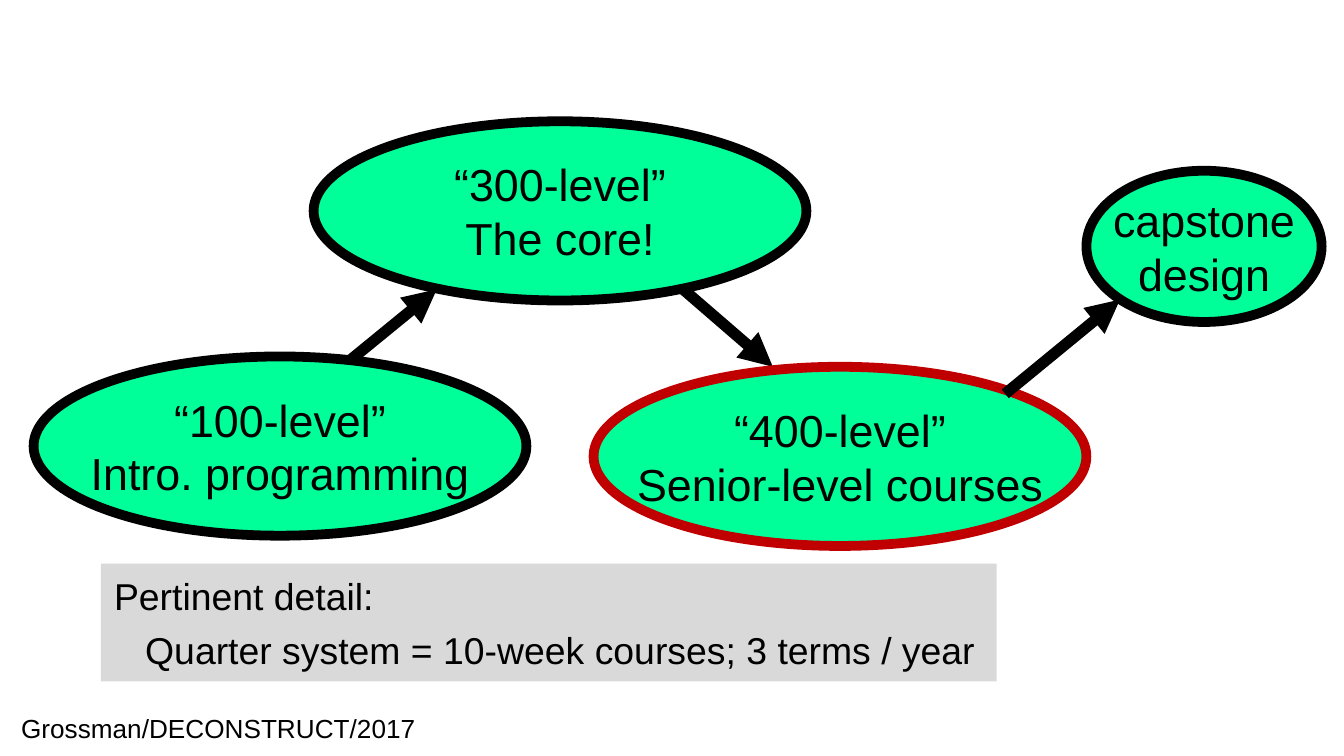
import pptx
import pptx.dml.color
import pptx.enum.shapes
import pptx.enum.text
import pptx.oxml.ns
import pptx.util
from lxml import etree

Pt = pptx.util.Pt
SHAPE = pptx.enum.shapes.MSO_SHAPE
ALIGN = pptx.enum.text.PP_ALIGN
ANCHOR = pptx.enum.text.MSO_ANCHOR
COLORS = {"black": "000000", "green": "00FF99", "red": "C00000", "gray": "D9D9D9"}
LEVEL_SIZE = (264, 96)


def rgb(name):
    return pptx.dml.color.RGBColor.from_string(COLORS[name])


def write(tf, text, size=24, align=ALIGN.CENTER, anchor=ANCHOR.MIDDLE, wrap=False,
          gap=0, indent=0):
    """Put one paragraph per line; gap and indent apply after the first line."""
    tf.word_wrap = wrap
    tf.vertical_anchor = anchor
    for i, line in enumerate(text.split("\n")):
        p = tf.paragraphs[0] if i == 0 else tf.add_paragraph()
        p.alignment = align
        if i:
            p.space_before = Pt(gap)
            p._p.get_or_add_pPr().set("marL", str(Pt(indent)))
        r = p.add_run()
        r.text = line
        r.font.name = "Arial"
        r.font.size = Pt(size)
        r.font.color.rgb = rgb("black")


class CourseSlide:
    """Holds the line widths and the slide being drawn."""
    outline = 5.25
    arrow_width = 6

    def __init__(self, prs):
        self.s = prs.slides.add_slide(prs.slide_layouts[6])

    def label(self, box, text, **fmt):
        sp = self.s.shapes.add_textbox(*map(Pt, box))
        write(sp.text_frame, text, **fmt)

    def shape(self, kind, box, fill, text, line=None, **fmt):
        sp = self.s.shapes.add_shape(kind, *map(Pt, box))
        sp.shadow.inherit = False
        sp.fill.solid()
        sp.fill.fore_color.rgb = rgb(fill)
        if line:
            sp.line.color.rgb = rgb(line)
            sp.line.width = Pt(self.outline)
        else:
            sp.line.fill.background()
        write(sp.text_frame, text, **fmt)

    def course(self, left, top, text, size=LEVEL_SIZE, line="black"):
        self.shape(SHAPE.OVAL, (left, top, *size), "green", text, line)

    def arrow(self, start, end):
        cx = self.s.shapes.add_connector(
            pptx.enum.shapes.MSO_CONNECTOR.STRAIGHT, *map(Pt, start + end))
        cx.line.color.rgb = rgb("black")
        cx.line.width = Pt(self.arrow_width)
        qn = pptx.oxml.ns.qn
        etree.SubElement(cx.line._get_or_add_ln(), qn("a:tailEnd"), type="triangle")
        etree.SubElement(cx._element.spPr, qn("a:effectLst"))


def main():
    prs = pptx.Presentation()
    prs.slide_width, prs.slide_height = Pt(720), Pt(405)
    s = CourseSlide(prs)

    s.label((-18, 378, 270, 27), "Grossman/DECONSTRUCT/2017", size=14,
            anchor=ANCHOR.TOP, wrap=True)
    s.arrow((366, 155), (414, 196.5))
    s.course(168, 65, "“300-level”\nThe core!")
    s.arrow((168, 209), (234, 155))
    s.course(318, 196.5, "“400-level”\nSenior-level courses", line="red")
    s.arrow((538.5, 211), (600, 160.5))
    s.course(582, 91.5, "capstone\ndesign", size=(126, 81))
    s.shape(SHAPE.RECTANGLE, (54, 302, 480, 63), "gray",
            "Pertinent detail:\nQuarter system = 10-week courses; 3 terms / year",
            size=20, align=ALIGN.LEFT, wrap=True, gap=5, indent=16.7)
    s.course(18, 191, "“100-level”\nIntro. programming")

    prs.save("out.pptx")


if __name__ == "__main__":
    main()
